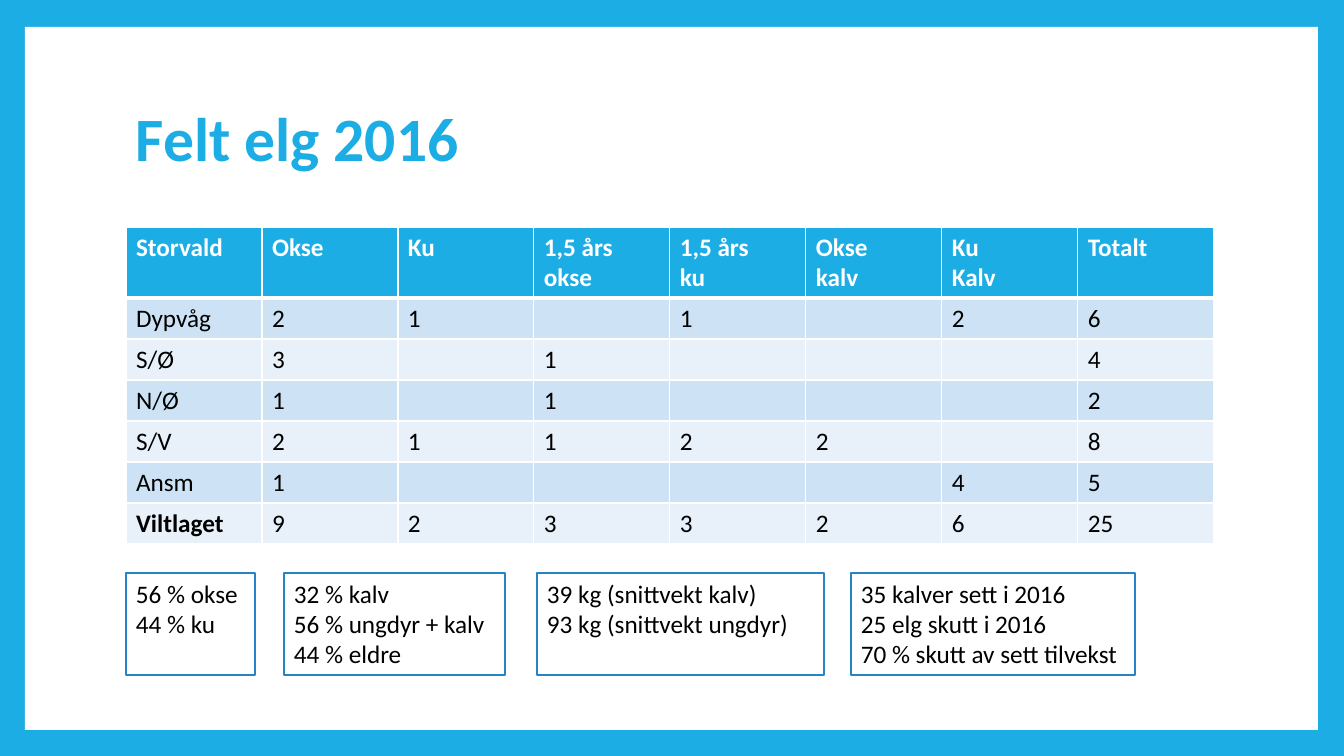
from lxml.etree import SubElement
from pptx import Presentation
from pptx.dml.color import RGBColor
from pptx.enum.shapes import MSO_SHAPE
from pptx.enum.text import MSO_ANCHOR, MSO_AUTO_SIZE, PP_ALIGN
from pptx.oxml.ns import qn
from pptx.util import Emu, Pt

EMU_PER_PX = 914400 / 100.8
FONT = "Calibri"
BLUE = RGBColor(0x1C, 0xAD, 0xE4)
BOX_BLUE = RGBColor(0x26, 0x83, 0xC6)
DARK_BAND = RGBColor(0xCD, 0xE3, 0xF5)
LIGHT_BAND = RGBColor(0xE8, 0xF1, 0xFA)
WHITE = RGBColor(0xFF, 0xFF, 0xFF)
BLACK = RGBColor(0, 0, 0)

HARVEST = [
    ["Storvald", "Okse", "Ku", "1,5 års okse", "1,5 års\nku", "Okse\nkalv", "Ku\nKalv", "Totalt"],
    ["Dypvåg", "2", "1", "", "1", "", "2", "6"],
    ["S/Ø", "3", "", "1", "", "", "", "4"],
    ["N/Ø", "1", "", "1", "", "", "", "2"],
    ["S/V", "2", "1", "1", "2", "2", "", "8"],
    ["Ansm", "1", "", "", "", "", "4", "5"],
    ["Viltlaget", "9", "2", "3", "3", "2", "6", "25"],
]
HEADER_HEIGHT, ROW_HEIGHT = 71, 41

# Left offset and width in px, then the text
FACTS = [
    (0, 129, "56 % okse\n44 % ku"),
    (158, 221, "32 % kalv\n56 % ungdyr + kalv\n44 % eldre"),
    (411, 287, "39 kg (snittvekt kalv)\n93 kg (snittvekt ungdyr)"),
    (725, 284, "35 kalver sett i 2016\n25 elg skutt i 2016\n70 % skutt av sett tilvekst"),
]


def px(length):
    return Emu(round(length * EMU_PER_PX))


def write(text_frame, text, size, color, bold=False):
    text_frame.text = text
    for paragraph in text_frame.paragraphs:
        paragraph.alignment = PP_ALIGN.LEFT
        for run in paragraph.runs:
            run.font.name = FONT
            run.font.size = Pt(size)
            run.font.bold = bold
            run.font.color.rgb = color


def add_panel(slide, left, top, width, height):
    panel = slide.shapes.add_shape(
        MSO_SHAPE.RECTANGLE, px(left), px(top), px(width), px(height))
    panel.shadow.inherit = False
    panel.fill.solid()
    panel.fill.fore_color.rgb = WHITE
    panel.line.fill.background()
    return panel


def add_title(slide, left, top, width, height):
    title = slide.shapes.add_textbox(px(left), px(top), px(width), px(height))
    text_frame = title.text_frame
    text_frame.word_wrap = True
    text_frame.vertical_anchor = MSO_ANCHOR.MIDDLE
    write(text_frame, "Felt elg 2016", 44, BLUE, bold=True)
    text_frame.paragraphs[0].line_spacing = 0.9


def set_borders(cell, bottom_width):
    properties = cell._tc.get_or_add_tcPr()
    for side, width in (("L", 1), ("R", 1), ("T", 1), ("B", bottom_width)):
        line = SubElement(properties, qn(f"a:ln{side}"), w=str(Pt(width)))
        fill = SubElement(line, qn("a:solidFill"))
        SubElement(fill, qn("a:srgbClr"), val=str(WHITE))


def add_harvest_table(slide, left, top, width):
    row_count, column_count = len(HARVEST), len(HARVEST[0])
    height = HEADER_HEIGHT + ROW_HEIGHT * (row_count - 1)
    table = slide.shapes.add_table(
        row_count, column_count, px(left), px(top), px(width), px(height)).table
    for column in table.columns:
        column.width = px(width / column_count)
    for row_index, values in enumerate(HARVEST):
        header = row_index == 0
        table.rows[row_index].height = px(HEADER_HEIGHT if header else ROW_HEIGHT)
        band = BLUE if header else DARK_BAND if row_index % 2 else LIGHT_BAND
        for column_index, value in enumerate(values):
            cell = table.cell(row_index, column_index)
            set_borders(cell, 3 if header else 1)
            cell.fill.solid()
            cell.fill.fore_color.rgb = band
            bold = header or value == "Viltlaget"
            write(cell.text_frame, value, 18, WHITE if header else BLACK, bold)


def add_fact_boxes(slide, left, top, height):
    for offset, width, text in FACTS:
        box = add_panel(slide, left + offset, top, width, height)
        box.line.color.rgb = BOX_BLUE
        box.line.width = Pt(1.5)
        text_frame = box.text_frame
        text_frame.word_wrap = True
        text_frame.auto_size = MSO_AUTO_SIZE.NONE
        text_frame.vertical_anchor = MSO_ANCHOR.TOP
        write(text_frame, text, 18, BLACK)


def build_harvest_slide(presentation):
    slide = presentation.slides.add_slide(presentation.slide_layouts[6])
    # Blue frame around a white panel
    slide.background.fill.solid()
    slide.background.fill.fore_color.rgb = BLUE
    add_panel(slide, 25, 27, 1293, 703)
    # Content
    add_title(slide, 126, 67, 1088, 149)
    add_harvest_table(slide, 126, 227, 1088)
    add_fact_boxes(slide, 126, 573, 102)


def main():
    presentation = Presentation()
    presentation.slide_width = px(1344)
    presentation.slide_height = px(756)
    build_harvest_slide(presentation)
    presentation.save("out.pptx")


if __name__ == "__main__":
    main()
